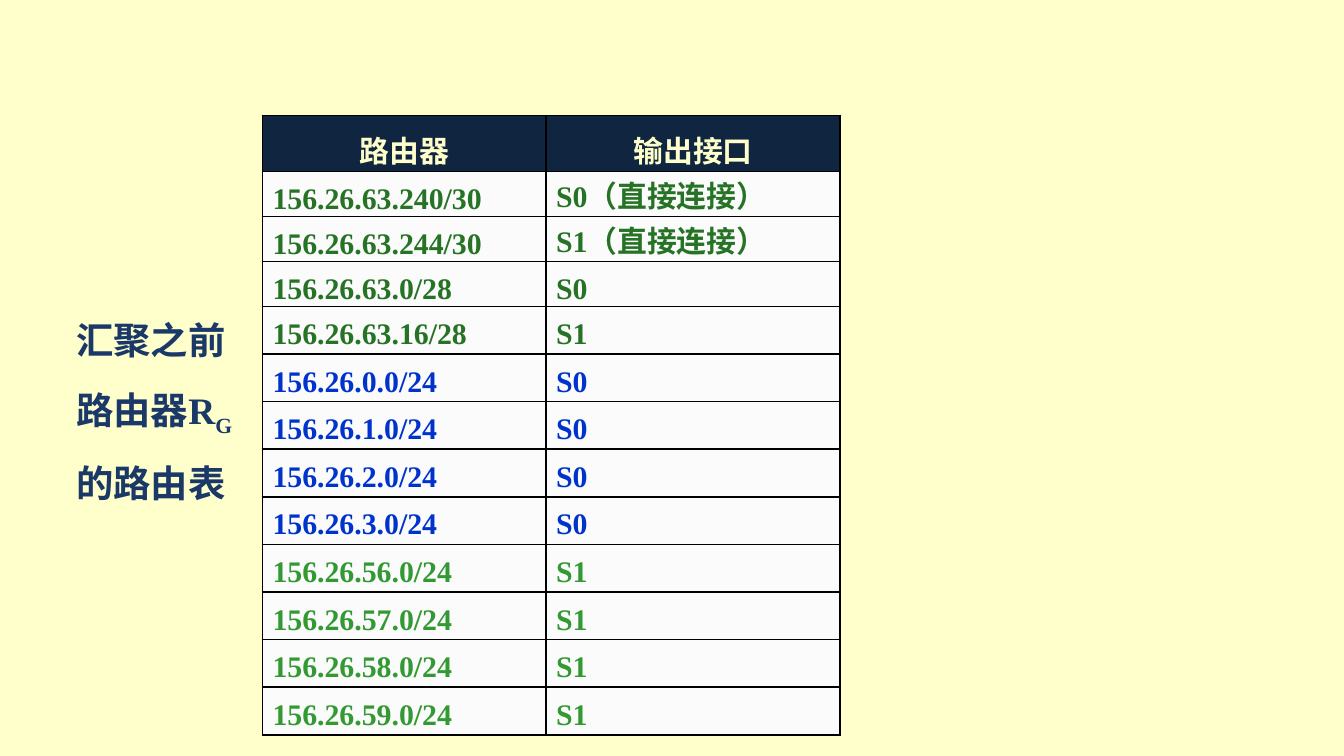
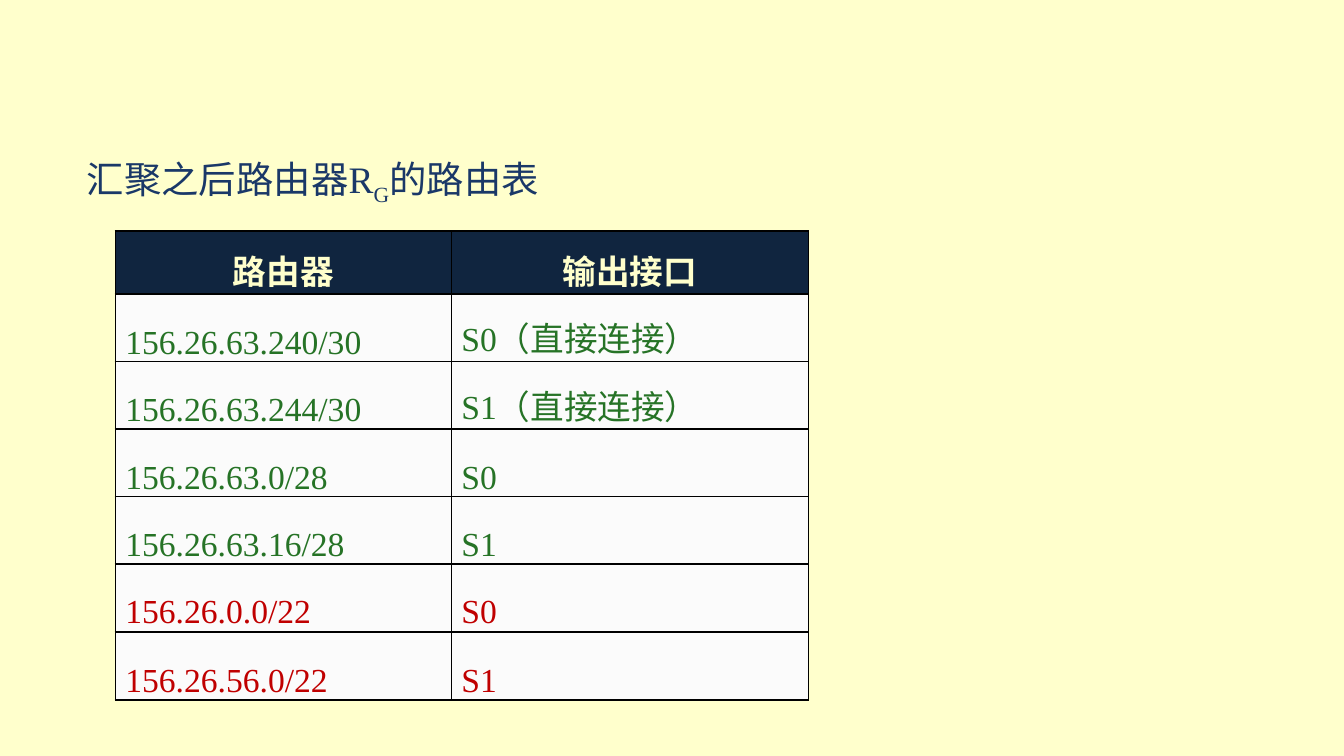
from dataclasses import dataclass

from lxml import etree
from pptx import Presentation
from pptx.dml.color import RGBColor
from pptx.enum.text import MSO_ANCHOR, PP_ALIGN
from pptx.oxml.ns import qn
from pptx.util import Cm, Pt

CENTER, LEFT, JUSTIFY = PP_ALIGN.CENTER, PP_ALIGN.LEFT, PP_ALIGN.JUSTIFY
MIDDLE = MSO_ANCHOR.MIDDLE

COLORS = {
    "background": "FFFFCC",
    "title": "1A3868",
    "header_fill": "10253F",
    "header_text": "FFFFCC",
    "cell_fill": "FBFBFB",
    "border": "000000",
    "direct": "267326",
    "via_s0": "0033CC",
    "via_s1": "339933",
    "merged": "C00000",
}
LATIN, CJK = "Times New Roman", "Noto Sans CJK SC"
HEADERS = ("路由器", "输出接口")
BORDER_TAGS = ("a:lnL", "a:lnR", "a:lnT", "a:lnB")


@dataclass(frozen=True)
class Route:
    network: str
    port: str
    color: str


@dataclass(frozen=True)
class Title:
    box: tuple[float, float, float, float]
    before: str
    after: str
    bold: bool


@dataclass(frozen=True)
class RouteTable:
    left: float
    top: float
    col_widths: tuple[float, float]
    row_heights: list[float]
    routes: list[Route]
    size: int
    bold: bool
    align: PP_ALIGN
    top_margin: float


DIRECT = [
    Route("156.26.63.240/30", "S0（直接连接）", "direct"),
    Route("156.26.63.244/30", "S1（直接连接）", "direct"),
    Route("156.26.63.0/28", "S0", "direct"),
    Route("156.26.63.16/28", "S1", "direct"),
]
SPLIT = [Route(f"156.26.{n}.0/24", "S0", "via_s0") for n in range(4)]
SPLIT += [Route(f"156.26.{n}.0/24", "S1", "via_s1") for n in range(56, 60)]
MERGED = [
    Route("156.26.0.0/22", "S0", "merged"),
    Route("156.26.56.0/22", "S1", "merged"),
]

SLIDES = [
    (
        Title((1.19, 5.07, 4.17, 4.98), "汇聚之前\v路由器R", "\v的路由表", True),
        RouteTable(4.96, 2.18, (5.36, 5.56), [1.06] + [0.85] * 3 + [0.9] * 9,
                   DIRECT + SPLIT, 16, True, LEFT, 0.42),
    ),
    (
        Title((1.39, 1.98, 10.52, 2.41), "汇聚之后路由器R", "的路由表", False),
        RouteTable(2.18, 4.37, (6.35, 6.75), [1.19] + [1.27] * 4 + [1.29] * 2,
                   DIRECT + MERGED, 18, False, JUSTIFY, 0.85),
    ),
]


def rgb(name: str) -> RGBColor:
    return RGBColor.from_string(COLORS[name])


def style_paragraph(p, size: int, color: str, bold: bool, latin: str = LATIN) -> None:
    p.font.size = Pt(size)
    p.font.bold = bold
    p.font.name = latin
    p.font.color.rgb = rgb(color)
    def_rpr = p._p.get_or_add_pPr().get_or_add_defRPr()
    etree.SubElement(def_rpr, qn("a:ea"), typeface=CJK)


def add_title(s, title: Title) -> None:
    """Add the caption, with the G of the router's name as a subscript."""
    tf = s.shapes.add_textbox(*map(Cm, title.box)).text_frame
    tf.word_wrap = True
    tf.vertical_anchor = MIDDLE
    p = tf.paragraphs[0]
    p.line_spacing = 1.5
    for text in (title.before, "G", title.after):
        for i, part in enumerate(text.split("\v")):
            if i:
                p.add_line_break()
            if part:
                r = p.add_run()
                r.text = part
                if text == "G":
                    r._r.get_or_add_rPr().set("baseline", "-25000")
    style_paragraph(p, 20, "title", title.bold)


def add_borders(cell) -> None:
    tc_pr = cell._tc.get_or_add_tcPr()
    for i, tag in enumerate(BORDER_TAGS):
        ln = etree.Element(qn(tag), w=str(Pt(1)))
        fill = etree.SubElement(ln, qn("a:solidFill"))
        etree.SubElement(fill, qn("a:srgbClr"), val=COLORS["border"])
        tc_pr.insert(i, ln)


def fill_cell(cell, text: str, fill: str, top_margin: float):
    """Set text, margins, fill and borders; return the paragraph."""
    cell.margin_left = cell.margin_right = Cm(0.19)
    cell.margin_top, cell.margin_bottom = Cm(top_margin), 0
    cell.fill.solid()
    cell.fill.fore_color.rgb = rgb(fill)
    add_borders(cell)
    p = cell.text_frame.paragraphs[0]
    p.add_run().text = text
    return p


def add_route_table(s, spec: RouteTable) -> None:
    table = s.shapes.add_table(
        len(spec.row_heights), len(HEADERS), Cm(spec.left), Cm(spec.top),
        Cm(sum(spec.col_widths)), Cm(sum(spec.row_heights))).table
    table.first_row = table.horz_banding = False
    for column, width in zip(table.columns, spec.col_widths):
        column.width = Cm(width)
    for row, height in zip(table.rows, spec.row_heights):
        row.height = Cm(height)

    for col, text in enumerate(HEADERS):
        p = fill_cell(table.cell(0, col), text, "header_fill", 0)
        p.alignment = CENTER
        p.line_spacing = 1.3
        style_paragraph(p, spec.size, "header_text", True, CJK)

    for row, route in enumerate(spec.routes, start=1):
        for col, text in enumerate((route.network, route.port)):
            p = fill_cell(table.cell(row, col), text, "cell_fill", spec.top_margin)
            p.alignment = spec.align
            p.line_spacing = Pt(12)
            style_paragraph(p, spec.size, route.color, spec.bold)


def main() -> None:
    prs = Presentation()
    prs.slide_width, prs.slide_height = Cm(25.4), Cm(14.29)
    blank = prs.slide_layouts[6]
    for title, route_table in SLIDES:
        s = prs.slides.add_slide(blank)
        s.background.fill.solid()
        s.background.fill.fore_color.rgb = rgb("background")
        add_title(s, title)
        add_route_table(s, route_table)
    prs.save("out.pptx")


if __name__ == "__main__":
    main()
